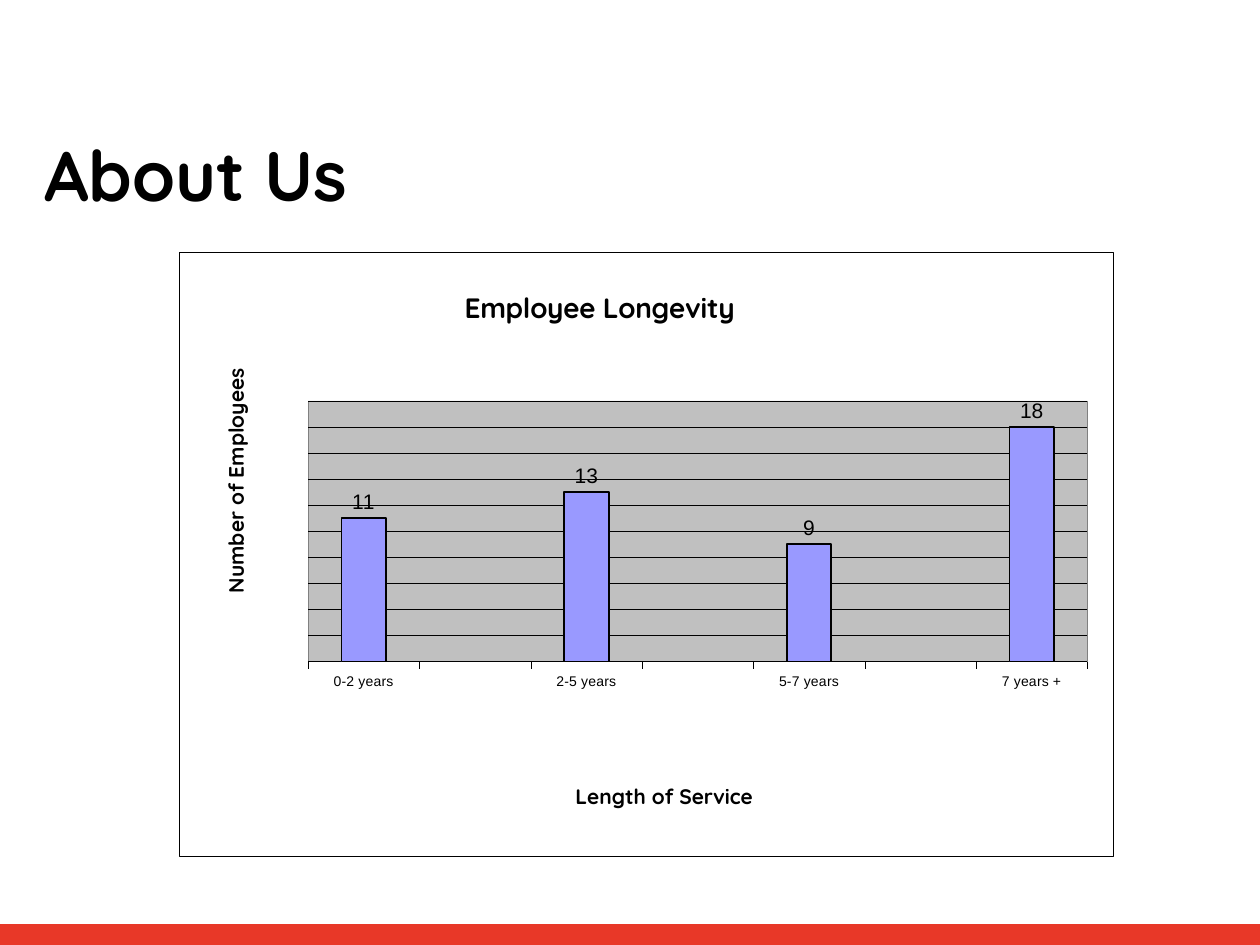
from lxml import etree
from pptx import Presentation
from pptx.chart.data import CategoryChartData
from pptx.dml.color import RGBColor
from pptx.enum.chart import XL_CHART_TYPE, XL_LABEL_POSITION, XL_TICK_LABEL_POSITION, XL_TICK_MARK
from pptx.enum.shapes import MSO_SHAPE
from pptx.enum.text import MSO_ANCHOR, PP_ALIGN
from pptx.oxml import parse_xml
from pptx.oxml.ns import nsdecls, qn
from pptx.util import Inches, Pt

BLACK = RGBColor(0x00, 0x00, 0x00)
WHITE = RGBColor(0xFF, 0xFF, 0xFF)
RED = RGBColor(0xE8, 0x38, 0x28)
GREY = RGBColor(0xC0, 0xC0, 0xC0)
DARK_GREY = RGBColor(0x80, 0x80, 0x80)
LAVENDER = RGBColor(0x99, 0x99, 0xFF)


def set_layout(element, index, **shares):
    """Place a chart part by shares of the chart's size."""
    for old in element.findall(qn("c:layout")):
        element.remove(old)
    layout = parse_xml(f"<c:layout {nsdecls('c')}><c:manualLayout/></c:layout>")
    settings = {"xMode": "edge", "yMode": "edge", **shares}
    if "w" in shares:
        settings = {"layoutTarget": "inner", **settings}
    for name, value in settings.items():
        etree.SubElement(layout[0], qn(f"c:{name}")).set("val", str(value))
    element.insert(index, layout)


def area_format(fill, line):
    return parse_xml(
        f'<c:spPr {nsdecls("c", "a")}><a:solidFill><a:srgbClr val="{fill}"/></a:solidFill>'
        f'<a:ln w="{Pt(0.25)}"><a:solidFill><a:srgbClr val="{line}"/></a:solidFill></a:ln></c:spPr>'
    )


def set_line(line, width):
    line.color.rgb = BLACK
    line.width = Pt(width)


class SlideBuilder:
    heading_font = "Quicksand"
    chart_font = "Arial"

    def __init__(self, presentation):
        self.width = presentation.slide_width
        self.height = presentation.slide_height
        self.slide = presentation.slides.add_slide(presentation.slide_layouts[5])

    def box(self, left, top, width, height):
        """Turn shares of the slide into lengths."""
        return (round(left * self.width), round(top * self.height),
                round(width * self.width), round(height * self.height))

    def style(self, font, size, name, bold=False):
        font.size = Pt(size)
        font.name = name
        font.bold = bold
        font.color.rgb = BLACK

    def title(self, text, *shares):
        shape = self.slide.shapes.title
        shape.left, shape.top, shape.width, shape.height = self.box(*shares)
        frame = shape.text_frame
        frame.text = text
        frame.vertical_anchor = MSO_ANCHOR.MIDDLE
        paragraph = frame.paragraphs[0]
        paragraph.alignment = PP_ALIGN.LEFT
        self.style(paragraph.font, 40, self.heading_font, bold=True)

    def band(self, color, *shares):
        shape = self.slide.shapes.add_shape(MSO_SHAPE.RECTANGLE, *self.box(*shares))
        shape.shadow.inherit = False
        shape.fill.solid()
        shape.fill.fore_color.rgb = color
        shape.line.fill.background()

    def chart_heading(self, owner, text, size, x, y, rotation=0):
        """Title a chart or an axis; x and y are shares of the chart."""
        title = owner.chart_title if hasattr(owner, "chart_title") else owner.axis_title
        frame = title.text_frame
        frame.text = text
        self.style(frame.paragraphs[0].font, size, self.heading_font, bold=True)
        element = title._element
        body = next(element.iter(qn("a:bodyPr")))
        body.set("rot", str(rotation * 60000))
        body.set("vert", "horz")
        set_layout(element, 1, x=x, y=y)

    def column_chart(self, categories, values, *shares):
        data = CategoryChartData()
        data.categories = categories
        data.add_series("Series 1", values)
        chart = self.slide.shapes.add_chart(
            XL_CHART_TYPE.COLUMN_CLUSTERED, *self.box(*shares), data).chart
        chart.has_legend = False
        self.style(chart.font, 12, self.chart_font)

        plot = chart.plots[0]
        plot.vary_by_categories = False
        plot.gap_width = 150
        series = plot.series[0]
        series.format.fill.solid()
        series.format.fill.fore_color.rgb = LAVENDER
        set_line(series.format.line, 1)
        labels = series.data_labels
        labels.show_value = True
        labels.position = XL_LABEL_POSITION.OUTSIDE_END
        self.style(labels.font, 12, self.chart_font)

        category_axis = chart.category_axis
        category_axis.major_tick_mark = XL_TICK_MARK.OUTSIDE
        self.style(category_axis.tick_labels.font, 8, self.chart_font)
        set_line(category_axis.format.line, 0.25)

        value_axis = chart.value_axis
        value_axis.minimum_scale, value_axis.maximum_scale = 0, 20
        value_axis.major_unit = 2
        value_axis.major_tick_mark = XL_TICK_MARK.NONE
        value_axis.tick_label_position = XL_TICK_LABEL_POSITION.NONE
        value_axis.format.line.fill.background()
        set_line(value_axis.major_gridlines.format.line, 0.25)

        chart_element = chart._chartSpace.find(qn("c:chart"))
        chart_element.addnext(area_format(WHITE, BLACK))
        plot_area = chart_element.find(qn("c:plotArea"))
        plot_area.append(area_format(GREY, DARK_GREY))
        set_layout(plot_area, 0, x=0.138, y=0.246, w=0.834, h=0.432)
        return chart


def main():
    presentation = Presentation()
    presentation.slide_width = Inches(10)
    presentation.slide_height = Inches(7.5)
    builder = SlideBuilder(presentation)
    builder.band(RED, 0, 0.978, 1, 0.022)
    builder.title("About Us", 0.025, 0.1, 0.9, 0.167)
    chart = builder.column_chart(
        ["0-2 years", "", "2-5 years", "", "5-7 years", "", "7 years +"],
        [11, None, 13, None, 9, None, 18],
        0.142, 0.267, 0.742, 0.639)
    builder.chart_heading(chart, "Employee Longevity", 16, 0.3, 0.05)
    builder.chart_heading(chart.category_axis, "Length of Service", 12, 0.42, 0.87)
    builder.chart_heading(chart.value_axis, "Number of Employees", 12, 0.04, 0.186, rotation=-90)
    presentation.save("out.pptx")


if __name__ == "__main__":
    main()
